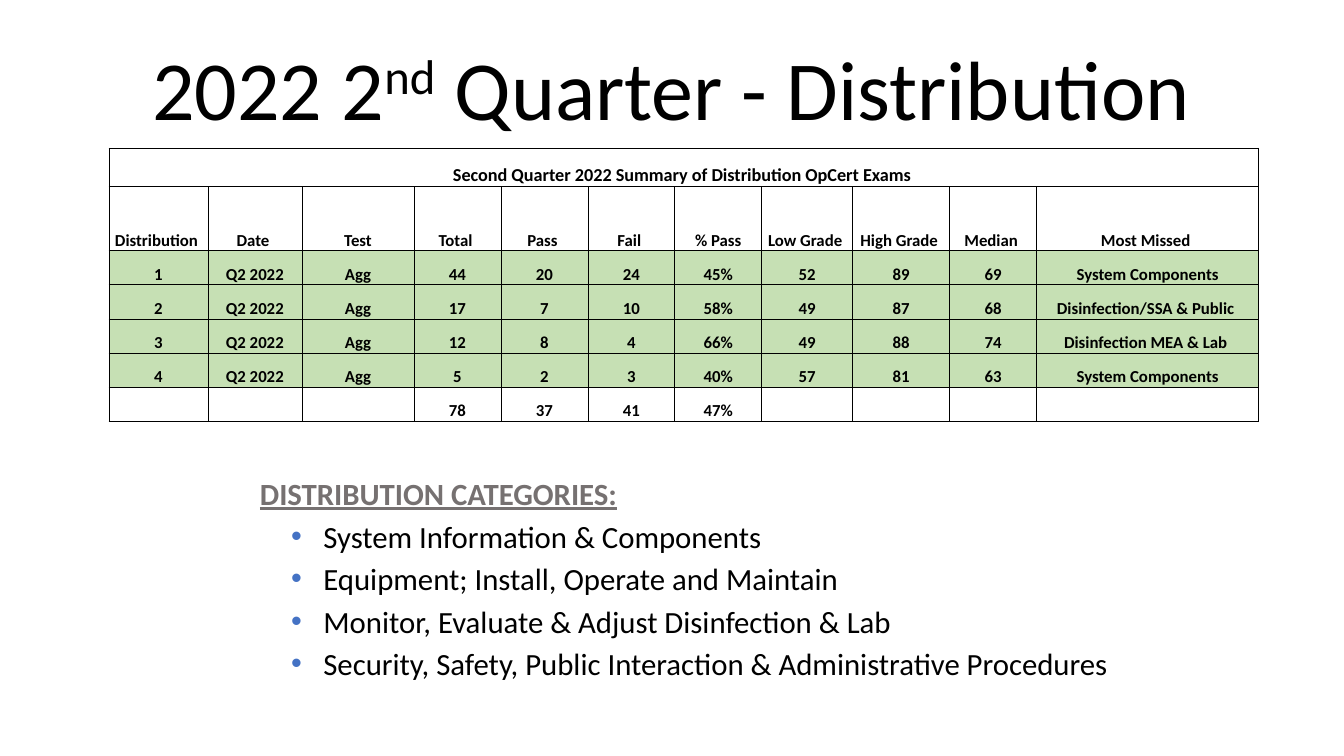
from lxml.etree import SubElement
from pptx import Presentation
from pptx.dml.color import RGBColor
from pptx.enum.text import MSO_ANCHOR, PP_ALIGN
from pptx.oxml.ns import qn
from pptx.util import Inches, Pt

WIDTH, HEIGHT = Inches(13.33), Inches(7.5)
COL, ROW = WIDTH / 100, HEIGHT / 100  # the slide is a grid of 100 by 100
FONT = "Calibri"
BLACK = RGBColor(0x00, 0x00, 0x00)
WHITE = RGBColor(0xFF, 0xFF, 0xFF)
GRAY = RGBColor(0x76, 0x71, 0x71)
BLUE = RGBColor(0x44, 0x72, 0xC4)
GREEN = RGBColor(0xC6, 0xE0, 0xB4)

TITLE_BOX = (3.07, 4.53, 93.75, 14.4)
TABLE_BOX = (8.1, 19.6, 85.58, 36.13)
LIST_BOX = (18.6, 62.13, 73.43, 31.07)

CAPTION = "Second Quarter 2022 Summary of Distribution OpCert Exams "
HEADERS = ["Distribution ", "Date ", "Test", "Total ", "Pass ", "Fail ", "% Pass",
           "Low Grade ", "High Grade ", "Median ", "Most Missed "]
EXAMS = [
    ["1", "Q2 2022", "Agg", "44", "20", "24", "45%", "52", "89", "69", "System Components"],
    ["2", "Q2 2022", "Agg", "17", "7", "10", "58%", "49", "87", "68", "Disinfection/SSA & Public "],
    ["3", "Q2 2022", "Agg", "12", "8", "4", "66%", "49", "88", "74", "Disinfection MEA & Lab "],
    ["4", "Q2 2022", "Agg", "5", "2", "3", "40%", "57", "81", "63", "System Components"],
]
TOTALS = ["", "", "", "78", "37", "41", "47%", "", "", "", ""]
COLUMN_WEIGHTS = [98, 93, 111, 86, 86, 86, 86, 90, 96, 86, 220]
ROW_WEIGHTS = [38, 64, 34, 34, 34, 34, 34]

CATEGORIES = [
    "System Information & Components",
    "Equipment; Install, Operate and Maintain",
    "Monitor, Evaluate & Adjust Disinfection & Lab",
    "Security, Safety, Public Interaction & Administrative Procedures",
]


def place(box):
    """Turn grid units into left, top, width and height."""
    x, y, w, h = box
    return round(x * COL), round(y * ROW), round(w * COL), round(h * ROW)


def add_run(p, text, size, color=BLACK, bold=False, underline=False, superscript=False):
    r = p.add_run()
    r.text = text
    r.font.name, r.font.size = FONT, Pt(size)
    r.font.bold, r.font.underline = bold, underline
    r.font.color.rgb = color
    if superscript:
        r._r.get_or_add_rPr().set("baseline", "30000")


def add_text_frame(slide, box):
    tf = slide.shapes.add_textbox(*place(box)).text_frame
    tf.word_wrap = True
    return tf


def add_title(slide, box):
    tf = add_text_frame(slide, box)
    tf.vertical_anchor = MSO_ANCHOR.BOTTOM
    p = tf.paragraphs[0]
    p.alignment, p.line_spacing = PP_ALIGN.CENTER, 0.9
    add_run(p, "2022 2", 60)
    add_run(p, "nd", 60, superscript=True)
    add_run(p, " Quarter - Distribution", 60)


def add_borders(cell):
    tcPr = cell._tc.get_or_add_tcPr()
    for side in ("lnL", "lnR", "lnT", "lnB"):
        ln = SubElement(tcPr, qn(f"a:{side}"), w=str(Pt(0.5)))
        fill = SubElement(ln, qn("a:solidFill"))
        SubElement(fill, qn("a:srgbClr"), val=str(BLACK))


def format_cell(cell, text, size, fill):
    add_borders(cell)
    cell.fill.solid()
    cell.fill.fore_color.rgb = fill
    cell.vertical_anchor = MSO_ANCHOR.BOTTOM
    cell.margin_left = cell.margin_right = cell.margin_top = Inches(0.01)
    cell.margin_bottom = 0
    p = cell.text_frame.paragraphs[0]
    p.alignment = PP_ALIGN.CENTER
    if text:
        add_run(p, text, size, bold=True)


def add_exam_table(slide, box):
    rows = [[CAPTION] + [""] * (len(HEADERS) - 1), HEADERS, *EXAMS, TOTALS]
    left, top, width, height = place(box)
    table = slide.shapes.add_table(len(rows), len(HEADERS), left, top, width, height).table
    table.first_row = table.horz_banding = False
    for column, weight in zip(table.columns, COLUMN_WEIGHTS):
        column.width = round(width * weight / sum(COLUMN_WEIGHTS))
    for row, weight in zip(table.rows, ROW_WEIGHTS):
        row.height = round(height * weight / sum(ROW_WEIGHTS))
    for i, texts in enumerate(rows):
        fill = GREEN if texts in EXAMS else WHITE
        for j, text in enumerate(texts):
            format_cell(table.cell(i, j), text, 13 if i == 0 else 12, fill)
    table.cell(0, 0).merge(table.cell(0, len(HEADERS) - 1))


def add_bullet(p):
    pPr = p._p.get_or_add_pPr()
    pPr.set("marL", str(Inches(0.63)))
    pPr.set("indent", str(Inches(-0.32)))
    color = SubElement(pPr, qn("a:buClr"))
    SubElement(color, qn("a:srgbClr"), val=str(BLUE))
    SubElement(pPr, qn("a:buFont"), typeface="Arial")
    SubElement(pPr, qn("a:buChar"), char="•")


def add_category_list(slide, box):
    tf = add_text_frame(slide, box)
    add_run(tf.paragraphs[0], "DISTRIBUTION CATEGORIES:", 22, GRAY, bold=True, underline=True)
    for category in CATEGORIES:
        p = tf.add_paragraph()
        p.space_before = Pt(4)
        add_bullet(p)
        add_run(p, category, 22)


def main():
    prs = Presentation()
    prs.slide_width, prs.slide_height = WIDTH, HEIGHT
    slide = prs.slides.add_slide(prs.slide_layouts[6])
    add_title(slide, TITLE_BOX)
    add_category_list(slide, LIST_BOX)
    add_exam_table(slide, TABLE_BOX)
    prs.save("out.pptx")


if __name__ == "__main__":
    main()
